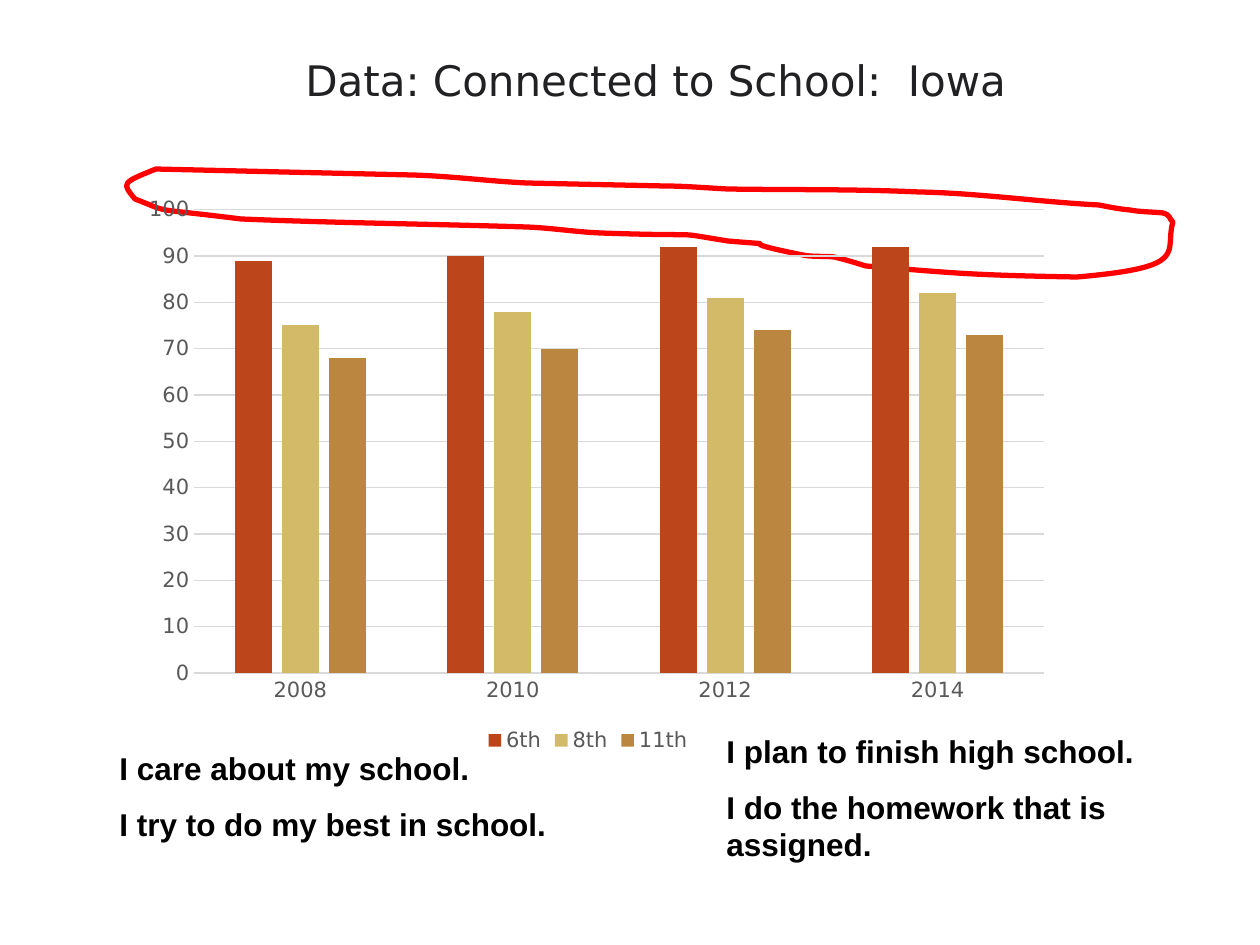
from lxml import etree
from pptx import Presentation
from pptx.chart.data import CategoryChartData
from pptx.dml.color import RGBColor
from pptx.enum.chart import XL_CHART_TYPE as ChartType, XL_LEGEND_POSITION as LegendPos
from pptx.enum.chart import XL_TICK_MARK as TickMark
from pptx.enum.text import MSO_ANCHOR as Anchor, PP_ALIGN as Align
from pptx.oxml import parse_xml
from pptx.oxml.ns import nsdecls, qn
from pptx.util import Pt

PX = 914400 / 126  # EMU in one px
INK = RGBColor(0x21, 0x21, 0x23)
BLACK = RGBColor(0, 0, 0)
RED = RGBColor(0xFF, 0, 0)
LABEL_GREY = RGBColor(0x59, 0x59, 0x59)
GRID_GREY = RGBColor(0xD9, 0xD9, 0xD9)

YEARS = ["2008", "2010", "2012", "2014"]
GRADES = [
    ("6th", (89, 90, 92, 92), RGBColor(0xBC, 0x45, 0x1B)),
    ("8th", (75, 78, 81, 82), RGBColor(0xD3, 0xBA, 0x68)),
    ("11th", (68, 70, 74, 73), RGBColor(0xBB, 0x86, 0x40)),
]
PLOT_AREA = {"x": 0.081, "y": 0.058, "w": 0.904, "h": 0.796}

# Hand-drawn loop: a start point, then two handles and an end point per curve
LOOP_START = (156, 169)
LOOP_CURVES = [
    ((241, 171), (326, 173), (411, 175)),
    ((451, 176), (486, 181), (527, 183)),
    ((572, 184), (619, 185), (664, 186)),
    ((685, 186), (707, 188), (728, 189)),
    ((791, 190), (856, 189), (919, 192)),
    ((977, 193), (1040, 202), (1099, 205)),
    ((1109, 207), (1119, 209), (1130, 210)),
    ((1140, 212), (1155, 212), (1163, 213)),
    ((1171, 215), (1169, 219), (1173, 222)),
    ((1164, 253), (1192, 267), (1077, 277)),
    ((964, 275), (956, 273), (866, 266)),
    ((856, 263), (847, 260), (834, 257)),
    ((825, 256), (811, 257), (803, 255)),
    ((717, 238), (799, 247), (728, 241)),
    ((665, 231), (717, 237), (601, 233)),
    ((576, 232), (552, 228), (527, 227)),
    ((432, 224), (336, 223), (241, 219)),
    ((145, 207), (174, 214), (135, 199)),
    ((122, 183), (121, 183), LOOP_START),
]


def px(*lengths):
    return [round(length * PX) for length in lengths]


def set_format(target, values):
    for name, value in values.items():
        setattr(target, name, value)


def set_font(font, color, **values):
    set_format(font, values)
    font.color.rgb = color


def set_title(slide, text, box):
    title = slide.shapes.title
    set_format(title, dict(zip(("left", "top", "width", "height"), px(*box))))
    title.text_frame.vertical_anchor = Anchor.MIDDLE
    heading = title.text_frame.paragraphs[0]
    heading.alignment = Align.CENTER
    run = heading.add_run()
    run.text = text
    set_font(run.font, INK, name="DejaVu Sans", size=Pt(24))
    # Faint white outline before the fill, soft shadow after it
    properties = run.font._element
    properties.insert(0, parse_xml(
        f'<a:ln {nsdecls("a")} w="9525"><a:solidFill><a:srgbClr val="FFFFFF">'
        '<a:alpha val="10000"/></a:srgbClr></a:solidFill></a:ln>'))
    properties.find(qn("a:solidFill")).addnext(parse_xml(
        f'<a:effectLst {nsdecls("a")}><a:outerShdw blurRad="38100" dist="25400" '
        'dir="2700000"><a:srgbClr val="000000"><a:alpha val="50000"/></a:srgbClr>'
        '</a:outerShdw></a:effectLst>'))


def add_statements(slide, statements, box):
    frame = slide.shapes.add_textbox(*px(*box)).text_frame
    frame.word_wrap = True
    for index, statement in enumerate(statements):
        paragraph = frame.add_paragraph() if index else frame.paragraphs[0]
        paragraph.space_before = Pt(10)
        run = paragraph.add_run()
        run.text = statement
        set_font(run.font, BLACK, name="Arial", size=Pt(18), bold=True)


def add_loop(slide, start, curves):
    builder = slide.shapes.build_freeform(*start, scale=PX)
    builder.add_line_segments([point for curve in curves for point in curve], close=True)
    loop = builder.convert_to_shape()
    loop.shadow.inherit = False
    loop.fill.background()
    loop.line.color.rgb = RED
    loop.line.width = Pt(3)
    # Gather each three line points into one curve
    segments = list(loop._element.iter(qn("a:lnTo")))
    for first in range(0, len(curves) * 3, 3):
        curve = etree.Element(qn("a:cubicBezTo"))
        segments[first].addprevious(curve)
        for segment in segments[first:first + 3]:
            curve.append(segment[0])
            segment.getparent().remove(segment)


def set_plot_area(chart, fractions):
    plot_area = chart._chartSpace.chart.plotArea
    for old in plot_area.findall(qn("c:layout")):
        plot_area.remove(old)
    modes = "".join(f'<c:{axis}Mode val="edge"/>' for axis in "xy")
    sizes = "".join(f'<c:{name} val="{value}"/>' for name, value in fractions.items())
    plot_area.insert(0, parse_xml(
        f'<c:layout {nsdecls("c")}><c:manualLayout><c:layoutTarget val="inner"/>'
        f'{modes}{sizes}</c:manualLayout></c:layout>'))


def add_grade_chart(slide, box):
    data = CategoryChartData()
    data.categories = YEARS
    for grade, values, _ in GRADES:
        data.add_series(grade, values)
    chart = slide.shapes.add_chart(ChartType.COLUMN_CLUSTERED, *px(*box), data).chart
    set_format(chart, {"has_title": False, "has_legend": True})
    set_font(chart.font, BLACK, name="DejaVu Sans", size=Pt(10))
    set_plot_area(chart, PLOT_AREA)

    # Columns
    columns = chart.plots[0]
    set_format(columns, {"gap_width": 219, "overlap": -27, "vary_by_categories": False})
    for series, (_, _, color) in zip(columns.series, GRADES):
        series.format.fill.solid()
        series.format.fill.fore_color.rgb = color

    # Axes, grid and legend
    years, percent, legend = chart.category_axis, chart.value_axis, chart.legend
    for axis in (years, percent):
        set_format(axis, {"major_tick_mark": TickMark.NONE, "minor_tick_mark": TickMark.NONE})
        set_font(axis.tick_labels.font, LABEL_GREY, name="DejaVu Sans", size=Pt(12))
    set_format(percent, {"minimum_scale": 0, "maximum_scale": 100, "major_unit": 10,
                         "has_major_gridlines": True})
    percent.format.line.fill.background()
    for line in (years.format.line, percent.major_gridlines.format.line):
        line.color.rgb = GRID_GREY
        line.width = Pt(0.75)
    set_format(legend, {"position": LegendPos.BOTTOM, "include_in_layout": False})
    set_font(legend.font, LABEL_GREY, name="DejaVu Sans", size=Pt(12))


def main():
    deck = Presentation()
    deck.slide_width, deck.slide_height = px(1260, 945)
    slide = deck.slides.add_slide(deck.slide_layouts[5])

    set_title(slide, "Data: Connected to School:  Iowa", (94, 21, 1124, 118))
    add_statements(slide, ["I care about my school.", "I try to do my best in school."],
                   (107, 743, 480, 107))
    add_statements(slide, ["I plan to finish high school.", "I do the homework that is assigned."],
                   (714, 726, 546, 145))
    add_loop(slide, LOOP_START, LOOP_CURVES)
    add_grade_chart(slide, (118, 176, 940, 582))

    deck.save("out.pptx")


if __name__ == "__main__":
    main()
